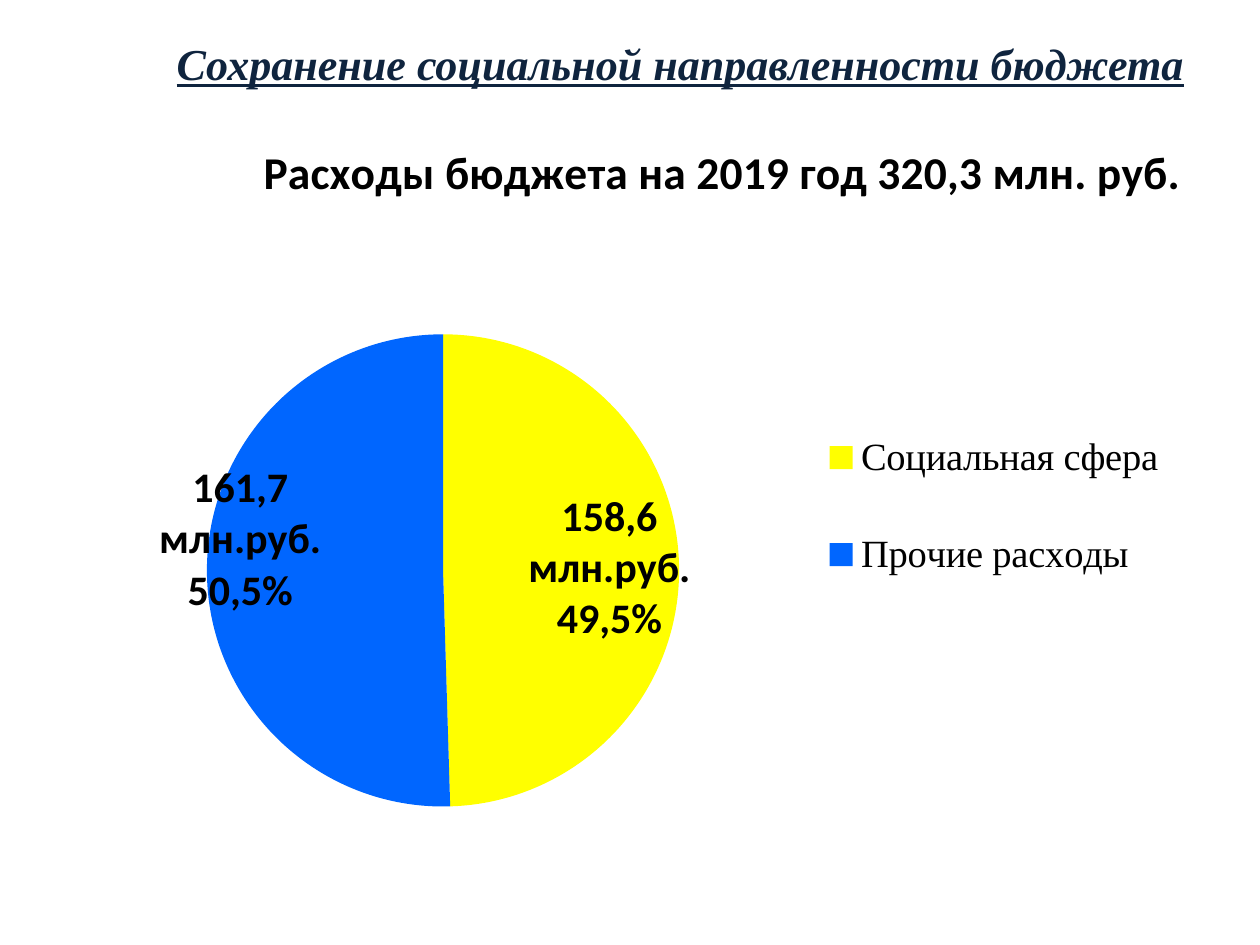
from dataclasses import dataclass

from lxml.etree import SubElement
from pptx import Presentation
from pptx.chart.chart import Chart
from pptx.chart.data import CategoryChartData
from pptx.dml.color import RGBColor
from pptx.enum.chart import XL_CHART_TYPE, XL_LABEL_POSITION, XL_LEGEND_POSITION
from pptx.enum.text import MSO_ANCHOR, PP_ALIGN
from pptx.oxml.ns import qn
from pptx.text.text import Font
from pptx.util import Cm, Pt


@dataclass(frozen=True)
class Theme:
    heading_font: str = "Times New Roman"
    body_font: str = "Calibri"
    heading_color: str = "0F243E"
    text_color: str = "000000"
    heading_size: float = 25.2
    chart_title_size: float = 26
    chart_size: float = 18
    legend_size: float = 22
    label_size: float = 24


@dataclass(frozen=True)
class Expense:
    name: str
    amount: float
    color: str
    label_lines: tuple[str, ...]
    label_shift: dict[str, float]


THEME = Theme()
EXPENSES = (
    Expense("Социальная сфера", 158.6, "FFFF00", ("158,6 млн.руб.", "49,5%"),
            {"x": 0.04, "y": 0}),
    Expense("Прочие расходы", 161.7, "0066FF", ("161,7 млн.руб.", "50,5%"),
            {"x": -0.07, "y": -0.04}),
)


def style(font: Font, name: str, size: float, color: str, bold: bool = False) -> None:
    font.name = name
    font.size = Pt(size)
    font.bold = bold
    font.color.rgb = RGBColor.from_string(color)


def set_layout(parent, values: dict[str, float], modes: tuple[str, ...] = (),
               target: str = "") -> None:
    for previous in parent.findall(qn("c:layout")):
        parent.remove(previous)
    layout = SubElement(parent, qn("c:layout"))
    manual = SubElement(layout, qn("c:manualLayout"))
    if target:
        SubElement(manual, qn("c:layoutTarget")).set("val", target)
    for mode in modes:
        SubElement(manual, qn(f"c:{mode}")).set("val", "edge")
    for key, value in values.items():
        SubElement(manual, qn(f"c:{key}")).set("val", str(value))
    leaders = {qn("c:idx"), qn("c:tx"), qn("c:legendPos")}
    position = 1 if parent[0].tag in leaders else 0
    parent.insert(position, layout)


def add_heading(slide, text: str) -> None:
    shape = slide.shapes.add_textbox(Cm(2.03), Cm(0.62), Cm(23.37), Cm(1.3))
    frame = shape.text_frame
    frame.word_wrap = True
    frame.vertical_anchor = MSO_ANCHOR.MIDDLE
    paragraph = frame.paragraphs[0]
    paragraph.alignment = PP_ALIGN.CENTER
    run = paragraph.add_run()
    run.text = text
    style(run.font, THEME.heading_font, THEME.heading_size, THEME.heading_color, True)
    run.font.italic = True
    run.font.underline = True


def add_chart_title(chart: Chart, text: str) -> None:
    chart.has_title = True
    run = chart.chart_title.text_frame.paragraphs[0].add_run()
    run.text = text
    style(run.font, THEME.body_font, THEME.chart_title_size, THEME.text_color, True)


def format_point(point, expense: Expense) -> None:
    point.format.fill.solid()
    point.format.fill.fore_color.rgb = RGBColor.from_string(expense.color)
    point.format.line.fill.background()
    frame = point.data_label.text_frame
    for index, line in enumerate(expense.label_lines):
        paragraph = frame.add_paragraph() if index else frame.paragraphs[0]
        run = paragraph.add_run()
        run.text = line
        style(run.font, THEME.body_font, THEME.label_size, THEME.text_color, True)
    point.data_label.position = XL_LABEL_POSITION.CENTER


def add_expense_chart(slide) -> None:
    data = CategoryChartData(number_format="0.0")
    data.categories = [expense.name for expense in EXPENSES]
    data.add_series("Series 1", [expense.amount for expense in EXPENSES])
    chart = slide.shapes.add_chart(
        XL_CHART_TYPE.PIE, Cm(0.51), Cm(2.51), Cm(24.41), Cm(16.2), data).chart
    style(chart.font, THEME.body_font, THEME.chart_size, THEME.text_color)
    add_chart_title(chart, "Расходы бюджета на 2019 год 320,3 млн. руб.")

    chart.has_legend = True
    chart.legend.position = XL_LEGEND_POSITION.RIGHT
    chart.legend.include_in_layout = False
    style(chart.legend.font, THEME.heading_font, THEME.legend_size, THEME.text_color)

    plot = chart.plots[0]
    plot.vary_by_categories = True
    series = plot.series[0]
    labels = series.data_labels
    labels.show_value = True
    labels.show_percentage = True
    style(labels.font, THEME.body_font, THEME.label_size, THEME.text_color, True)
    for index, expense in enumerate(EXPENSES):
        format_point(series.points[index], expense)

    root = chart.element
    edges = ("xMode", "yMode")
    set_layout(next(root.iter(qn("c:title"))), {"x": 0.19, "y": 0.01}, edges)
    set_layout(next(root.iter(qn("c:plotArea"))),
               {"x": 0.15, "y": 0.26, "w": 0.39, "h": 0.59}, edges, "inner")
    set_layout(next(root.iter(qn("c:legend"))),
               {"x": 0.65, "y": 0.32, "w": 0.3, "h": 0.31}, edges)
    for label, expense in zip(root.iter(qn("c:dLbl")), EXPENSES):
        set_layout(label, expense.label_shift)


def main() -> None:
    presentation = Presentation()
    presentation.slide_width = Cm(25.4)
    presentation.slide_height = Cm(19.05)
    slide = presentation.slides.add_slide(presentation.slide_layouts[6])
    add_heading(slide, "Сохранение социальной направленности бюджета")
    add_expense_chart(slide)
    presentation.save("out.pptx")


if __name__ == "__main__":
    main()
